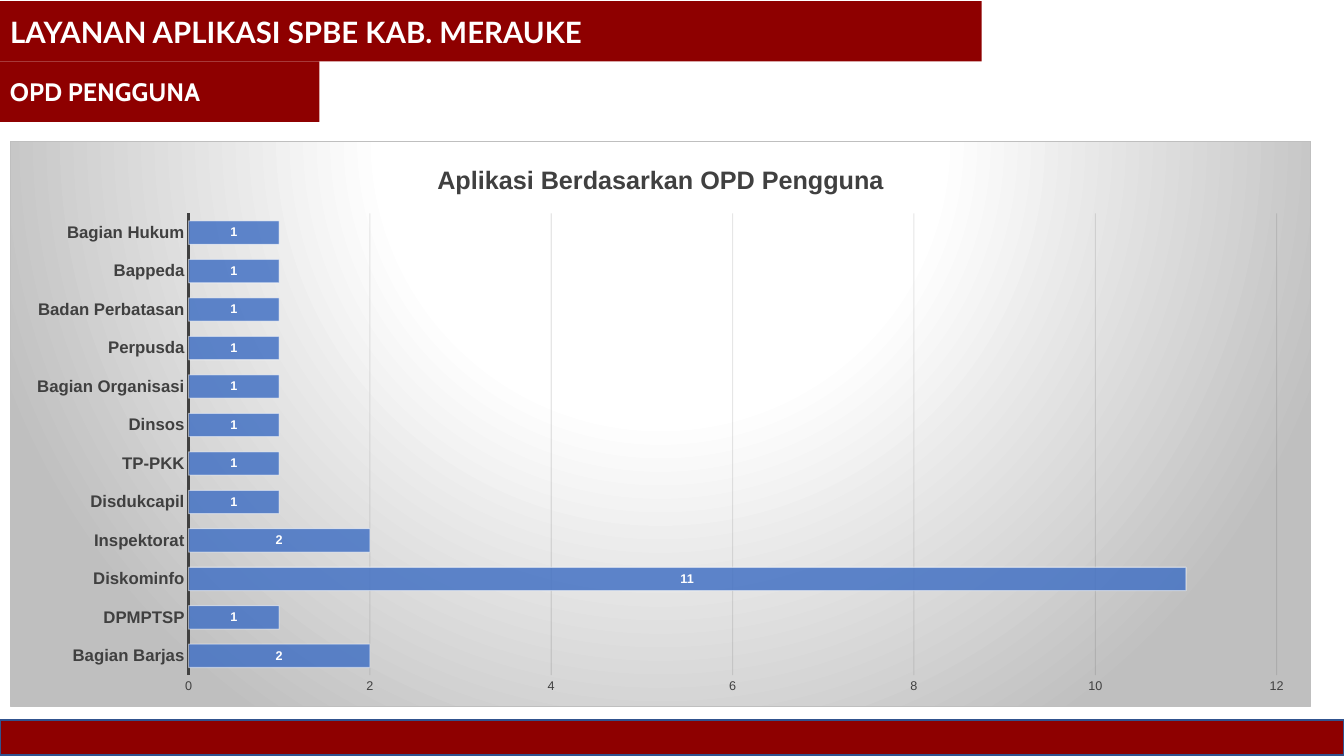
from pptx import Presentation
from pptx.chart.data import CategoryChartData
from pptx.dml.color import RGBColor
from pptx.enum.chart import XL_CHART_TYPE as ChartType, XL_TICK_MARK as TickMark
from pptx.enum.shapes import MSO_SHAPE as Shape
from pptx.enum.text import MSO_ANCHOR as Anchor, MSO_AUTO_SIZE as AutoSize, PP_ALIGN as Align
from pptx.oxml import parse_xml
from pptx.oxml.ns import nsdecls, qn
from pptx.util import Cm, Pt

MAROON = RGBColor(0x8E, 0x00, 0x00)
NAVY = RGBColor(0x31, 0x53, 0x8F)
BLUE = RGBColor(0x44, 0x72, 0xC4)
WHITE = RGBColor(0xFF, 0xFF, 0xFF)
BLACK = RGBColor(0x00, 0x00, 0x00)
DARK_GREY = RGBColor(0x40, 0x40, 0x40)
GRID = RGBColor(0x0D, 0x0D, 0x0D)
SILVER = RGBColor(0xBF, 0xBF, 0xBF)

PAGE_WIDTH, PAGE_HEIGHT = Cm(33.87), Cm(19.05)

APPS_BY_AGENCY = {
    "Bagian Barjas": 2, "DPMPTSP": 1, "Diskominfo": 11, "Inspektorat": 2,
    "Disdukcapil": 1, "TP-PKK": 1, "Dinsos": 1, "Bagian Organisasi": 1,
    "Perpusda": 1, "Badan Perbatasan": 1, "Bappeda": 1, "Bagian Hukum": 1,
}


def set_font(font, size, color, bold=False, name="Arial"):
    font.size, font.bold, font.name = Pt(size), bold, name
    font.color.rgb = color


def set_line(line, color, width):
    line.color.rgb = color
    line.width = Pt(width)


def set_opacity(root, query, percent):
    for color in root.xpath(query + "//a:srgbClr"):
        color.append(parse_xml(f'<a:alpha {nsdecls("a")} val="{percent * 1000}"/>'))


def place(shape, box):
    shape.left, shape.top, shape.width, shape.height = box


def add_rectangle(page, box):
    shape = page.shapes.add_shape(Shape.RECTANGLE, *box)
    shape.shadow.inherit = False
    shape.line.fill.background()
    return shape


def write_heading(shape, text, size, font_name):
    shape.fill.solid()
    shape.fill.fore_color.rgb = MAROON
    frame = shape.text_frame
    frame.auto_size = AutoSize.NONE
    frame.word_wrap = True
    frame.vertical_anchor = Anchor.MIDDLE
    para = frame.paragraphs[0]
    para.text = text
    para.alignment = Align.LEFT
    set_font(para.font, size, WHITE, True, font_name)


def add_header(page, box):
    left, top, width, height = box
    row_height = height // 2
    # Title band
    title = page.shapes.title
    place(title, (left, top, width, row_height))
    write_heading(title, "LAYANAN APLIKASI SPBE KAB. MERAUKE", 21, "Lato")
    # Subtitle band
    subtitle = add_rectangle(page, (left, top + row_height, Cm(8.05), row_height))
    write_heading(subtitle, "OPD PENGGUNA", 18, "Cabin")


def add_footer(page, box):
    band = add_rectangle(page, box)
    band.fill.solid()
    band.fill.fore_color.rgb = MAROON
    set_line(band.line, NAVY, 1)


def style_chart_area(chart):
    # Radial gradient background with a thin border
    stops = "".join(
        f'<a:gs pos="{position * 1000}"><a:srgbClr val="{color}"/></a:gs>'
        for position, color in ((0, WHITE), (39, WHITE), (100, SILVER)))
    area = parse_xml(
        f'<c:spPr {nsdecls("c", "a")}><a:gradFill><a:gsLst>{stops}</a:gsLst>'
        '<a:path path="circle"><a:fillToRect l="50000" t="-80000" r="50000" b="180000"/></a:path>'
        f'</a:gradFill><a:ln w="{Pt(0.75)}"><a:solidFill><a:srgbClr val="{SILVER}"/>'
        '</a:solidFill></a:ln></c:spPr>')
    chart.element.find(qn("c:chart")).addnext(area)
    # Plot area position
    plot_area = chart.element.find(".//" + qn("c:plotArea"))
    for layout in plot_area.findall(qn("c:layout")):
        plot_area.remove(layout)
    fractions = "".join(f'<c:{key} val="{value}"/>' for key, value in (
        ("x", 0.137), ("y", 0.127), ("w", 0.837), ("h", 0.818)))
    plot_area.insert(0, parse_xml(
        f'<c:layout {nsdecls("c")}><c:manualLayout><c:layoutTarget val="inner"/>'
        f'<c:xMode val="edge"/><c:yMode val="edge"/>{fractions}</c:manualLayout></c:layout>'))


def style_axes(chart):
    agencies, counts = chart.category_axis, chart.value_axis
    for axis in (agencies, counts):
        axis.major_tick_mark = axis.minor_tick_mark = TickMark.NONE
    agencies.has_major_gridlines = False
    set_font(agencies.tick_labels.font, 12, DARK_GREY, True)
    set_line(agencies.format.line, DARK_GREY, 1.5)
    set_font(counts.tick_labels.font, 9, DARK_GREY)
    counts.minimum_scale, counts.maximum_scale, counts.major_unit = 0, 12, 2
    counts.format.line.fill.background()
    set_line(counts.major_gridlines.format.line, GRID, 0.75)
    set_opacity(chart.element, ".//c:majorGridlines", 10)


def style_bars(chart):
    plot = chart.plots[0]
    plot.gap_width, plot.overlap = 65, 100
    plot.vary_by_categories = False
    bars = plot.series[0]
    bars.format.fill.solid()
    bars.format.fill.fore_color.rgb = BLUE
    set_line(bars.format.line, WHITE, 0.75)
    set_opacity(chart.element, ".//c:ser/c:spPr/a:solidFill", 85)
    set_opacity(chart.element, ".//c:ser/c:spPr/a:ln", 50)
    labels = bars.data_labels
    labels.show_value = True
    set_font(labels.font, 9, WHITE, True)


def add_agency_chart(page, box):
    data = CategoryChartData()
    data.categories = list(APPS_BY_AGENCY)
    data.add_series("Series 1", list(APPS_BY_AGENCY.values()))
    chart = page.shapes.add_chart(ChartType.BAR_STACKED, *box, data).chart
    set_font(chart.font, 10, BLACK)
    chart.has_legend = False
    chart.has_title = True
    chart.chart_title.include_in_layout = False
    para = chart.chart_title.text_frame.paragraphs[0]
    para.text = "Aplikasi Berdasarkan OPD Pengguna"
    set_font(para.font, 18, DARK_GREY, True)
    style_chart_area(chart)
    style_axes(chart)
    style_bars(chart)


def main():
    deck = Presentation()
    deck.slide_width, deck.slide_height = PAGE_WIDTH, PAGE_HEIGHT
    page = deck.slides.add_slide(deck.slide_layouts[5])
    add_footer(page, (0, Cm(18.14), PAGE_WIDTH, Cm(0.89)))
    add_header(page, (0, Cm(0.03), Cm(24.74), Cm(3.04)))
    add_agency_chart(page, (Cm(0.25), Cm(3.56), Cm(32.79), Cm(14.25)))
    deck.save("out.pptx")


if __name__ == "__main__":
    main()
